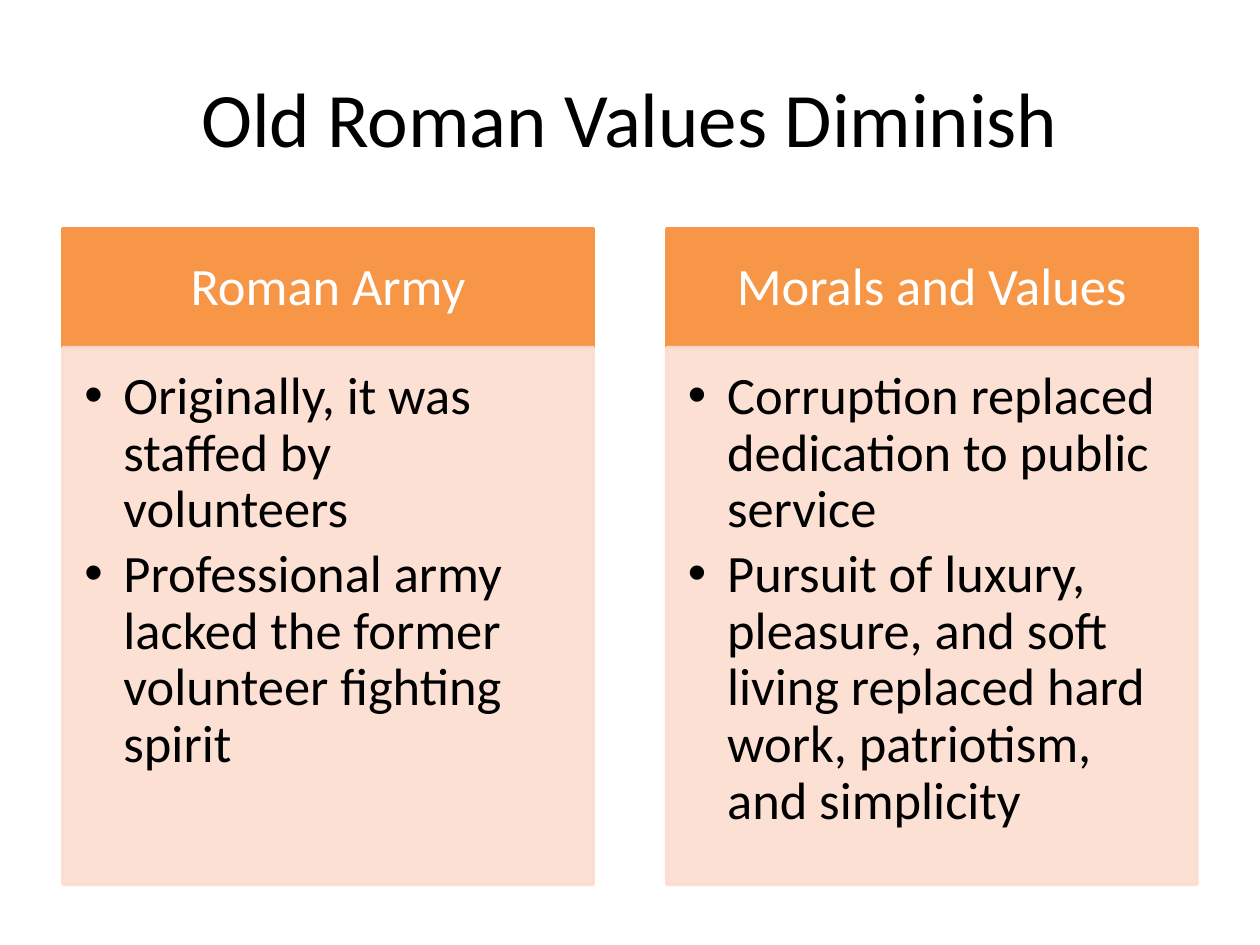
from lxml.etree import SubElement as Sub
from pptx import Presentation
from pptx.dml.color import RGBColor as Rgb
from pptx.enum.shapes import MSO_SHAPE as Kind
from pptx.enum.text import MSO_ANCHOR as Anchor, PP_ALIGN as Align
from pptx.oxml.ns import qn
from pptx.util import Cm, Pt

HUES = {"head": "F79646", "body": "FCDDCF", "dark": "000000", "light": "FFFFFF"}
FONT = "Calibri"

# Column grid, in cm
LEFT, STEP, WIDE = 1.27, 12.17, 10.69
TOP, HEAD, BODY = 4.62, 2.39, 10.82

COLUMNS = [
    ("Roman Army", [
        "Originally, it was staffed by volunteers",
        "Professional army lacked the former volunteer fighting spirit",
    ]),
    ("Morals and Values", [
        "Corruption replaced dedication to public service",
        "Pursuit of luxury, pleasure, and soft living replaced hard work, "
        "patriotism, and simplicity",
    ]),
]


def style(para, size, hue):
    para.font.name = FONT
    para.font.size = Pt(size)
    para.font.color.rgb = Rgb.from_string(HUES[hue])


def inset(frame, left, top, right, bottom):
    frame.word_wrap = True
    frame.margin_left, frame.margin_top = Cm(left), Cm(top)
    frame.margin_right, frame.margin_bottom = Cm(right), Cm(bottom)


def fade(fill, alpha):
    for node in fill._xPr.iter(qn("a:srgbClr")):
        Sub(node, qn("a:alpha")).set("val", str(alpha * 1000))


def bullet(para):
    props = para._p.get_or_add_pPr()
    props.set("marL", str(Cm(0.79)))
    props.set("indent", str(-Cm(0.79)))
    Sub(props, qn("a:buFont")).set("typeface", "Arial")
    Sub(props, qn("a:buChar")).set("char", "•")


def add_title(slide, text):
    box = slide.shapes.add_textbox(Cm(1.27), Cm(0.76), Cm(22.86), Cm(3.18))
    frame = box.text_frame
    frame.word_wrap = True
    frame.vertical_anchor = Anchor.MIDDLE
    para = frame.paragraphs[0]
    para.text = text
    para.alignment = Align.CENTER
    style(para, 44, "dark")


def add_panel(slide, left, top, high, hue):
    panel = slide.shapes.add_shape(
        Kind.RECTANGLE, Cm(left), Cm(top), Cm(WIDE), Cm(high))
    panel.shadow.inherit = False
    panel.fill.solid()
    panel.fill.fore_color.rgb = Rgb.from_string(HUES[hue])
    panel.line.color.rgb = Rgb.from_string(HUES[hue])
    panel.line.width = Pt(2)
    return panel


def add_head(slide, left, text):
    frame = add_panel(slide, left, TOP, HEAD, "head").text_frame
    inset(frame, 0.58, 0.33, 0.58, 0.33)
    frame.vertical_anchor = Anchor.MIDDLE
    para = frame.paragraphs[0]
    para.text = text
    para.alignment = Align.CENTER
    para.line_spacing = 0.9
    style(para, 30, "light")


def add_body(slide, left, points):
    panel = add_panel(slide, left, TOP + HEAD, BODY, "body")
    fade(panel.fill, 90)  # covers the line colour too
    frame = panel.text_frame
    inset(frame, 0.43, 0.43, 0.58, 0.66)
    frame.vertical_anchor = Anchor.TOP
    for i, text in enumerate(points):
        para = frame.add_paragraph() if i else frame.paragraphs[0]
        para.text = text
        para.level = 1
        para.alignment = Align.LEFT
        para.line_spacing = 0.9
        para.space_after = Pt(4.5)
        bullet(para)
        style(para, 30, "dark")


def main():
    deck = Presentation()
    deck.slide_width, deck.slide_height = Cm(25.4), Cm(19.05)
    slide = deck.slides.add_slide(deck.slide_layouts[6])

    add_title(slide, "Old Roman Values Diminish")

    # Two columns, each a heading over a list
    for i, (name, points) in enumerate(COLUMNS):
        left = LEFT + i * STEP
        add_head(slide, left, name)
        add_body(slide, left, points)

    deck.save("out.pptx")


if __name__ == "__main__":
    main()
